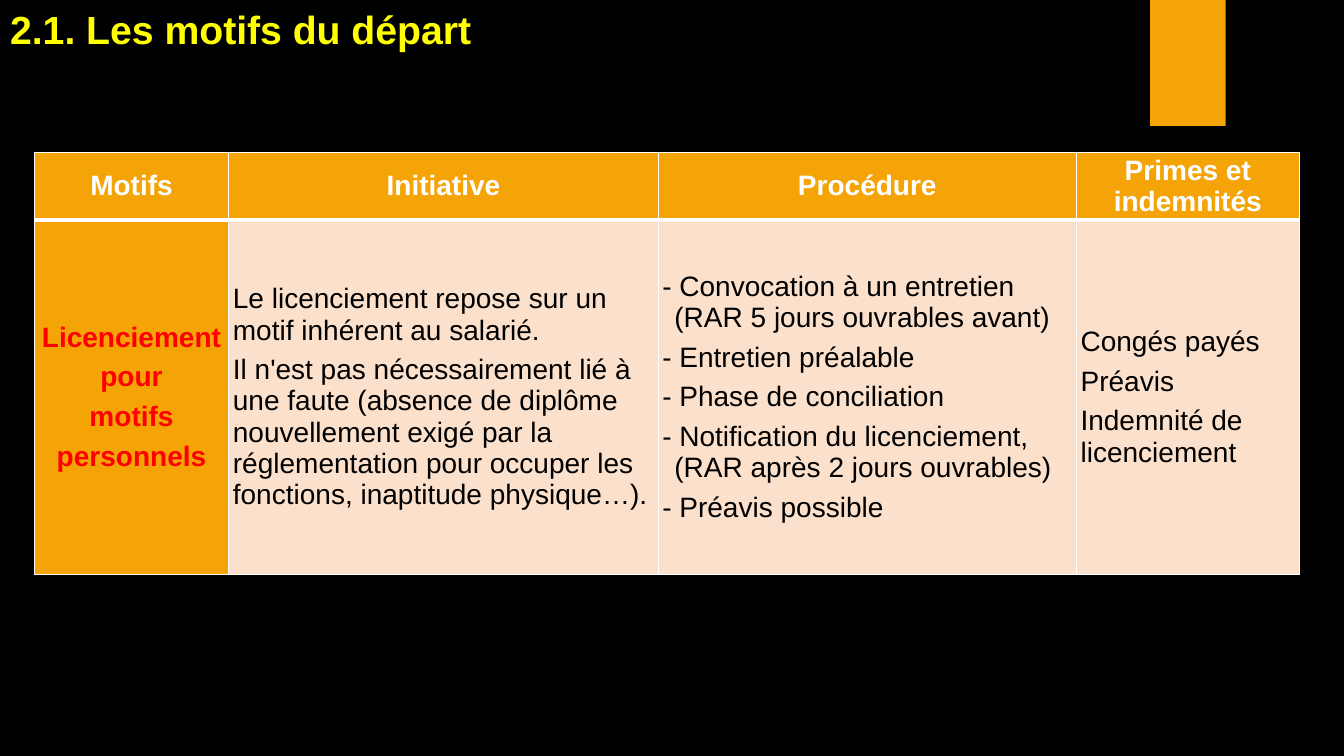
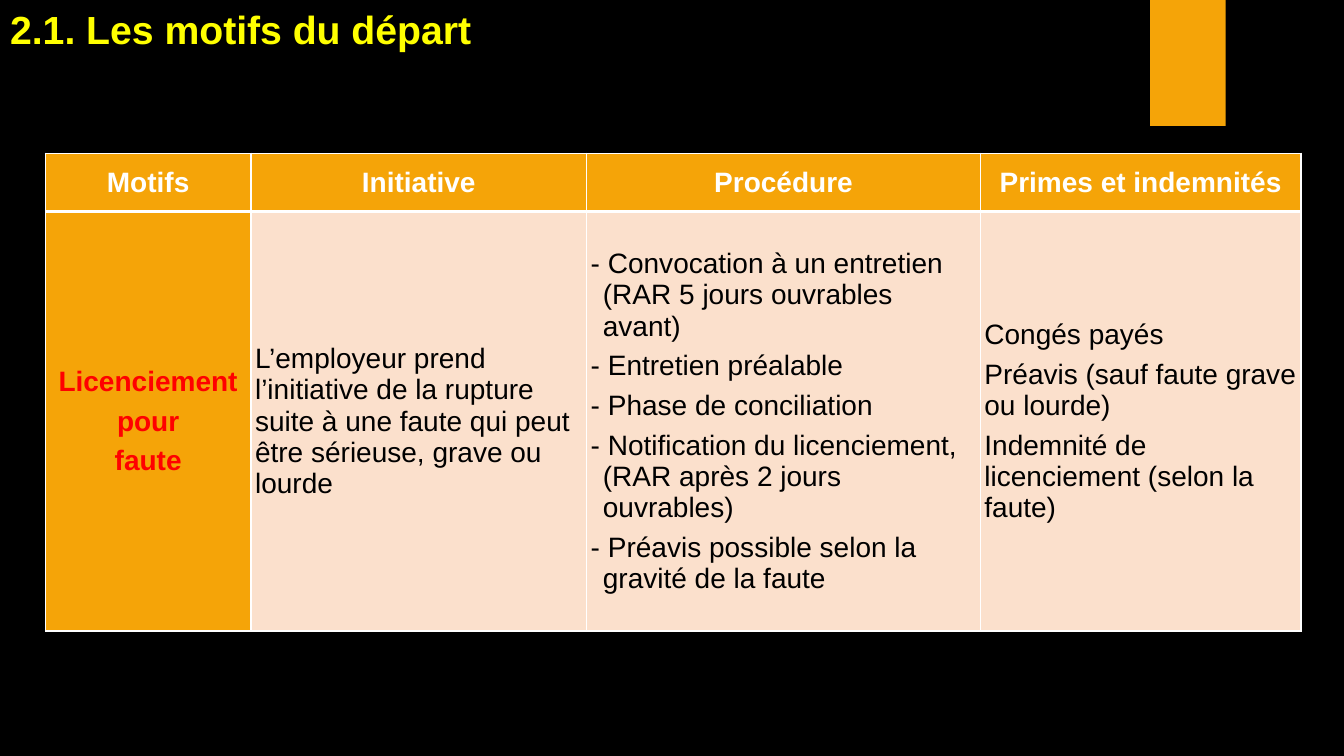
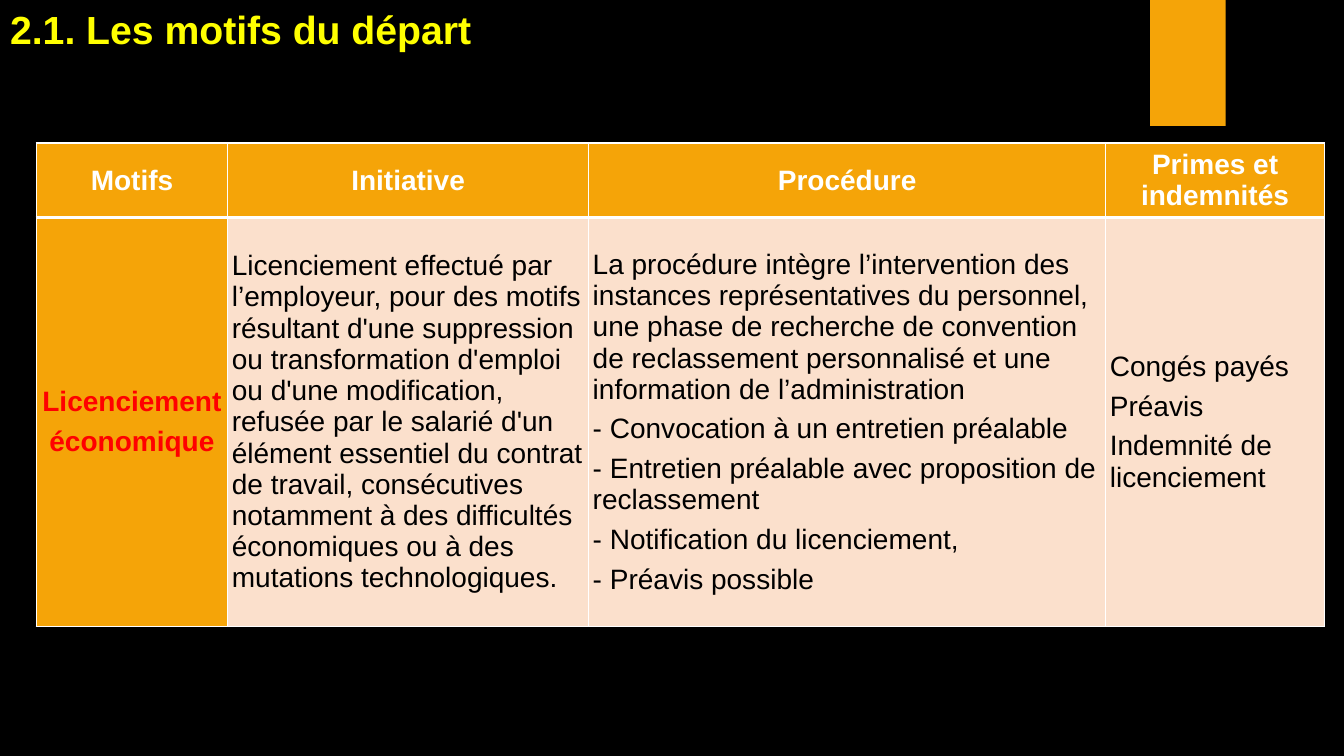
from lxml import etree
from pptx import Presentation
from pptx.dml.color import RGBColor
from pptx.enum.shapes import MSO_SHAPE
from pptx.enum.text import MSO_ANCHOR, MSO_AUTO_SIZE, PP_ALIGN
from pptx.oxml.ns import qn
from pptx.util import Pt

RECTANGLE = MSO_SHAPE.RECTANGLE
TOP, MIDDLE = MSO_ANCHOR.TOP, MSO_ANCHOR.MIDDLE
NO_AUTOFIT = MSO_AUTO_SIZE.NONE
LEFT, CENTER, JUSTIFY = PP_ALIGN.LEFT, PP_ALIGN.CENTER, PP_ALIGN.JUSTIFY

COLORS = {
    "background": "000000",
    "accent": "F5A408",
    "cell": "FBE0CC",
    "title": "FFFF00",
    "reason": "FF0000",
    "text": "000000",
    "white": "FFFFFF",
}
FONT = "Arial"
PAGE_SIZE = (960, 540)
TITLE_BOX = (0, 0, 520.5, 41)
BAND_BOX = (821.5, 0, 54, 90)
TITLE = "2.1. Les motifs du départ"
HEADERS = ["Motifs", "Initiative", "Procédure", "Primes et indemnités"]
CELL_MARGIN = 2.9
HANGING = 8.64
TITLE_ONLY = 5

TABLES = [
    {
        "left": 24.5, "top": 108.7,
        "columns": [139, 306.7, 298.8, 159.1], "rows": [48.2, 253.4],
        "hanging": HANGING,
        "body": [
            ["Licenciement", "pour", "motifs", "personnels"],
            ["Le licenciement repose sur un motif inhérent au salarié.",
             "Il n'est pas nécessairement lié à une faute (absence de diplôme "
             "nouvellement exigé par la réglementation pour occuper les "
             "fonctions, inaptitude physique…)."],
            ["- Convocation à un entretien (RAR 5 jours ouvrables avant)",
             "- Entretien préalable",
             "- Phase de conciliation",
             "- Notification du licenciement, (RAR après 2 jours ouvrables)",
             "- Préavis possible"],
            ["Congés payés", "Préavis", "Indemnité de licenciement"],
        ],
    },
    {
        "left": 32.4, "top": 109.4,
        "columns": [146.9, 239.8, 281.2, 229], "rows": [41.8, 299.5],
        "hanging": HANGING,
        "body": [
            ["Licenciement", "pour", "faute"],
            ["L’employeur prend l’initiative de la rupture suite à une faute "
             "qui peut être sérieuse, grave ou lourde"],
            ["- Convocation à un entretien (RAR 5 jours ouvrables avant)",
             "- Entretien préalable",
             "- Phase de conciliation",
             "- Notification du licenciement, (RAR après 2 jours ouvrables)",
             "- Préavis possible selon la gravité de la faute"],
            ["Congés payés", "Préavis (sauf faute grave ou lourde)",
             "Indemnité de licenciement (selon la faute)"],
        ],
    },
    {
        "left": 25.9, "top": 102.2,
        "columns": [136.8, 257.8, 369.4, 156.2], "rows": [53.2, 292.2],
        "hanging": 0,
        "body": [
            ["Licenciement", "économique"],
            ["Licenciement effectué par l’employeur, pour des motifs résultant "
             "d'une suppression ou transformation d'emploi ou d'une "
             "modification, refusée par le salarié d'un élément essentiel du "
             "contrat de travail, consécutives notamment à des difficultés "
             "économiques ou à des mutations technologiques."],
            ["La procédure intègre l’intervention des instances "
             "représentatives du personnel, une phase de recherche de "
             "convention de reclassement personnalisé et une information de "
             "l’administration",
             "- Convocation à un entretien préalable",
             "- Entretien préalable avec proposition de reclassement",
             "- Notification du licenciement,",
             "- Préavis possible"],
            ["Congés payés", "Préavis", "Indemnité de licenciement"],
        ],
    },
]


def color(name):
    return RGBColor.from_string(COLORS[name])


def points(values):
    return [Pt(value) for value in values]


def write(frame, lines, size=20, ink="text", bold=False, align=LEFT, hanging=0):
    """Fill a text frame with one paragraph a line; dashed lines may hang."""
    for index, line in enumerate(lines):
        para = frame.paragraphs[0] if index == 0 else frame.add_paragraph()
        para.alignment = align
        if index:
            para.space_before = Pt(6)
        if hanging and line.startswith("- "):
            properties = para._p.get_or_add_pPr()
            properties.set("marL", str(Pt(hanging)))
            properties.set("indent", str(-Pt(hanging)))
        span = para.add_run()
        span.text = line
        span.font.name = FONT
        span.font.size = Pt(size)
        span.font.bold = bold
        span.font.color.rgb = color(ink)


def add_borders(cell, **widths):
    """Draw white borders; widths go by side: L, R, T, B."""
    properties = cell._tc.get_or_add_tcPr()
    for side, width in widths.items():
        line = etree.SubElement(properties, qn(f"a:ln{side}"), w=str(Pt(width)))
        fill = etree.SubElement(line, qn("a:solidFill"))
        etree.SubElement(fill, qn("a:srgbClr"), val=COLORS["white"])


def format_cell(cell, lines, fill, top=1, bottom=1, **text_format):
    cell.margin_left = cell.margin_right = Pt(CELL_MARGIN)
    cell.margin_top = cell.margin_bottom = 0
    cell.vertical_anchor = MIDDLE
    add_borders(cell, L=1, R=1, T=top, B=bottom)
    cell.fill.solid()
    cell.fill.fore_color.rgb = color(fill)
    write(cell.text_frame, lines, **text_format)


def add_reason_table(page, left, top, columns, rows, body, hanging):
    box = points((left, top, sum(columns), sum(rows)))
    table = page.shapes.add_table(len(rows), len(columns), *box).table
    for row, height in zip(table.rows, rows):
        row.height = Pt(height)
    for index, width in enumerate(columns):
        table.columns[index].width = Pt(width)
        format_cell(table.cell(0, index), [HEADERS[index]], "accent", bottom=3,
                    ink="white", bold=True, align=CENTER)
        if index == 0:
            look = {"fill": "accent", "ink": "reason", "bold": True, "align": CENTER}
        else:
            look = {"fill": "cell", "hanging": hanging}
        format_cell(table.cell(1, index), body[index], top=3, **look)


def add_band(page, box):
    band = page.shapes.add_shape(RECTANGLE, *points(box))
    band.shadow.inherit = False
    band.fill.solid()
    band.fill.fore_color.rgb = color("accent")
    band.line.fill.background()


def add_title(page, box):
    title = page.shapes.title
    title.left, title.top, title.width, title.height = points(box)
    frame = title.text_frame
    frame.auto_size = NO_AUTOFIT
    frame.vertical_anchor = TOP
    write(frame, [TITLE], size=28, ink="title", bold=True, align=JUSTIFY)


def add_page(deck, content):
    page = deck.slides.add_slide(deck.slide_layouts[TITLE_ONLY])
    add_band(page, BAND_BOX)
    add_title(page, TITLE_BOX)
    add_reason_table(page, **content)


def main():
    deck = Presentation()
    deck.slide_width, deck.slide_height = points(PAGE_SIZE)
    background = deck.slide_master.background.fill
    background.solid()
    background.fore_color.rgb = color("background")
    for content in TABLES:
        add_page(deck, content)
    deck.save("out.pptx")


if __name__ == "__main__":
    main()
